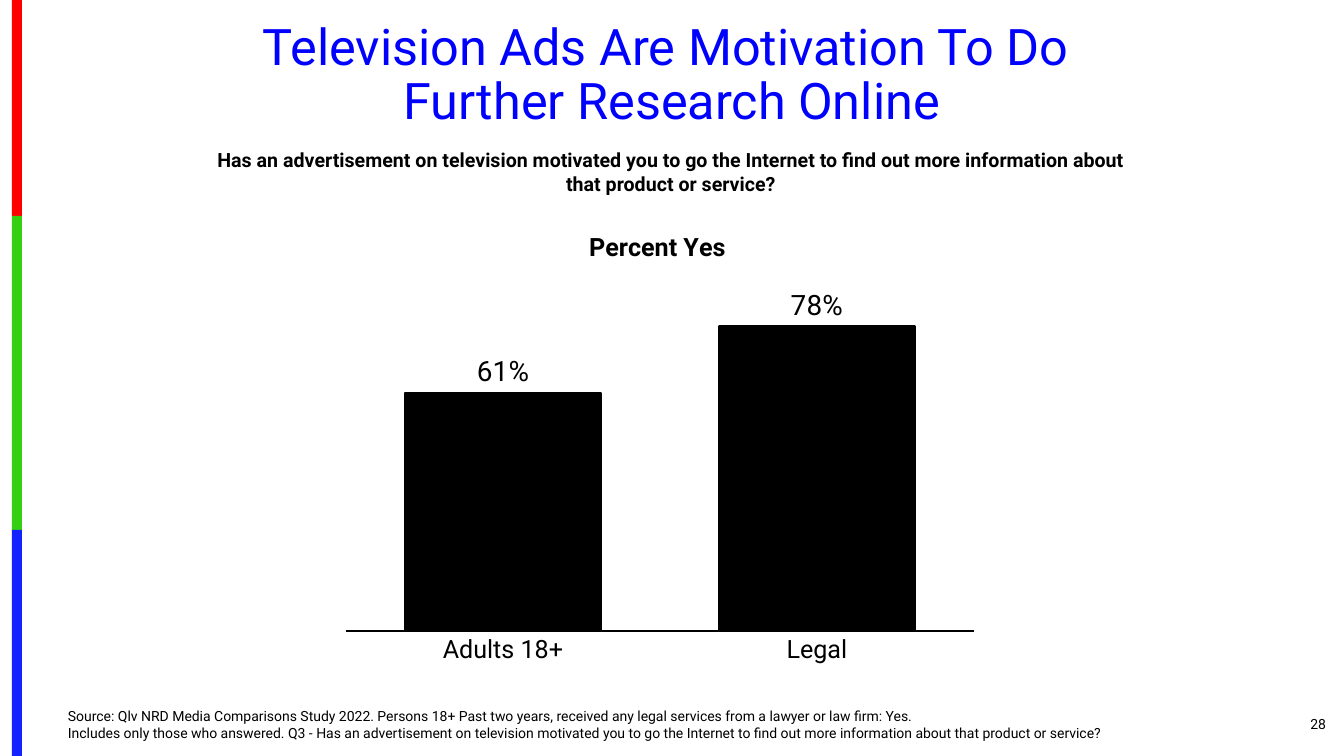
from lxml.etree import SubElement
from pptx import Presentation
from pptx.chart.data import CategoryChartData
from pptx.dml.color import RGBColor
from pptx.enum.chart import XL_CHART_TYPE, XL_LABEL_POSITION, XL_TICK_MARK
from pptx.enum.shapes import MSO_SHAPE
from pptx.enum.text import MSO_ANCHOR, PP_ALIGN
from pptx.oxml.ns import qn
from pptx.util import Emu, Pt

COLORS = {"red": "FE0000", "green": "36CF12", "blue": "1322FE",
          "title": "0000FF", "black": "000000"}
FONT = "Roboto"
EMU_PER_PX = 914400 / 100.8


def px(length):
    return Emu(round(length * EMU_PER_PX))


def color(name):
    return RGBColor.from_string(COLORS[name])


def style_font(font, size, color_name="black", bold=False):
    font.name = FONT
    font.size = Pt(size)
    font.bold = bold
    font.color.rgb = color(color_name)


def write_text(frame, text, size, color_name="black", bold=False,
               align=PP_ALIGN.LEFT, anchor=MSO_ANCHOR.TOP, line_spacing=1.0):
    frame.word_wrap = True
    frame.vertical_anchor = anchor
    paragraph = frame.paragraphs[0]
    paragraph.text = text
    paragraph.alignment = align
    paragraph.line_spacing = line_spacing
    for run in paragraph.runs:
        style_font(run.font, size, color_name, bold)


def set_layout(parent, index, target=None, **fractions):
    """Give a chart title or plot area a fixed place, as fractions of the chart."""
    for old in parent.findall(qn("c:layout")):
        parent.remove(old)
    layout = SubElement(parent, qn("c:layout"))
    parent.insert(index, layout)
    manual = SubElement(layout, qn("c:manualLayout"))
    settings = {"layoutTarget": target} if target else {}
    settings.update(xMode="edge", yMode="edge", **fractions)
    for tag, value in settings.items():
        SubElement(manual, qn(f"c:{tag}")).set("val", str(value))


class SlideBuilder:
    def __init__(self, presentation):
        self.slide = presentation.slides.add_slide(presentation.slide_layouts[6])

    def bar(self, left, top, width, height, fill):
        shape = self.slide.shapes.add_shape(
            MSO_SHAPE.RECTANGLE, px(left), px(top), px(width), px(height))
        shape.shadow.inherit = False
        shape.fill.solid()
        shape.fill.fore_color.rgb = color(fill)
        shape.line.fill.background()

    def text(self, left, top, width, height, text, **text_format):
        box = self.slide.shapes.add_textbox(px(left), px(top), px(width), px(height))
        write_text(box.text_frame, text, **text_format)

    def column_chart(self, left, top, width, height, title, values, maximum):
        data = CategoryChartData(number_format="0%")
        data.categories = list(values)
        data.add_series("Series 1", list(values.values()))
        chart = self.slide.shapes.add_chart(
            XL_CHART_TYPE.COLUMN_CLUSTERED,
            px(left), px(top), px(width), px(height), data).chart
        style_font(chart.font, 10)
        chart.has_legend = False

        # Title
        chart.has_title = True
        title_frame = chart.chart_title.text_frame
        title_frame.text = title
        style_font(title_frame.paragraphs[0].runs[0].font, 18, bold=True)
        chart.chart_title.include_in_layout = False
        set_layout(chart.chart_title._element, 1, x=0.38, y=0.04)

        # Axes
        category_axis, value_axis = chart.category_axis, chart.value_axis
        category_axis.major_tick_mark = XL_TICK_MARK.NONE
        category_axis.format.line.color.rgb = color("black")
        category_axis.format.line.width = Pt(1.5)
        style_font(category_axis.tick_labels.font, 18)
        value_axis.minimum_scale = 0
        value_axis.maximum_scale = maximum
        value_axis.has_major_gridlines = False
        value_axis.visible = False

        # Columns and their labels
        plot = chart.plots[0]
        plot.gap_width = 60
        plot.vary_by_categories = False
        series = plot.series[0]
        series.format.fill.solid()
        series.format.fill.fore_color.rgb = color("black")
        series.format.line.color.rgb = color("black")
        series.format.line.width = Pt(1.5)
        labels = series.data_labels
        labels.show_value = True
        labels.number_format = "0%"
        labels.number_format_is_linked = False
        labels.position = XL_LABEL_POSITION.OUTSIDE_END
        style_font(labels.font, 20)
        plot_area = chart._chartSpace.chart.plotArea
        set_layout(plot_area, 0, target="inner", x=0, y=0.147, w=1, h=0.692)


def main():
    presentation = Presentation()
    presentation.slide_width, presentation.slide_height = px(1344), px(756)
    builder = SlideBuilder(presentation)

    # Stripe down the left edge
    edges = [0, 216, 530, 756]
    for fill, top, bottom in zip(("red", "green", "blue"), edges, edges[1:]):
        builder.bar(12, top, 10, bottom - top, fill)

    # Title and survey question
    builder.text(46, 17, 1252, 120,
                 "Television Ads Are Motivation To Do \vFurther Research Online",
                 size=36, color_name="title", align=PP_ALIGN.CENTER, line_spacing=0.9)
    builder.text(188, 143, 966, 57,
                 "Has an advertisement on television motivated you to go the Internet "
                 "to find out more information about that product or service?",
                 size=14, bold=True, align=PP_ALIGN.CENTER)

    # Share answering yes
    builder.column_chart(345, 205, 630, 508, "Percent Yes",
                         {"Adults 18+": 0.61, "Legal": 0.78}, maximum=0.9)

    # Source and page number
    builder.text(58, 702, 1088, 44,
                 "Source: Qlv NRD Media Comparisons Study 2022. Persons 18+ Past two years, "
                 "received any legal services from a lawyer or law firm: Yes.\v"
                 "Includes only those who answered. Q3 - Has an advertisement on television "
                 "motivated you to go the Internet to find out more information about that "
                 "product or service?",
                 size=10, anchor=MSO_ANCHOR.BOTTOM)
    builder.text(1227, 704, 109, 40, "28", size=10,
                 align=PP_ALIGN.RIGHT, anchor=MSO_ANCHOR.MIDDLE)

    presentation.save("out.pptx")


if __name__ == "__main__":
    main()
